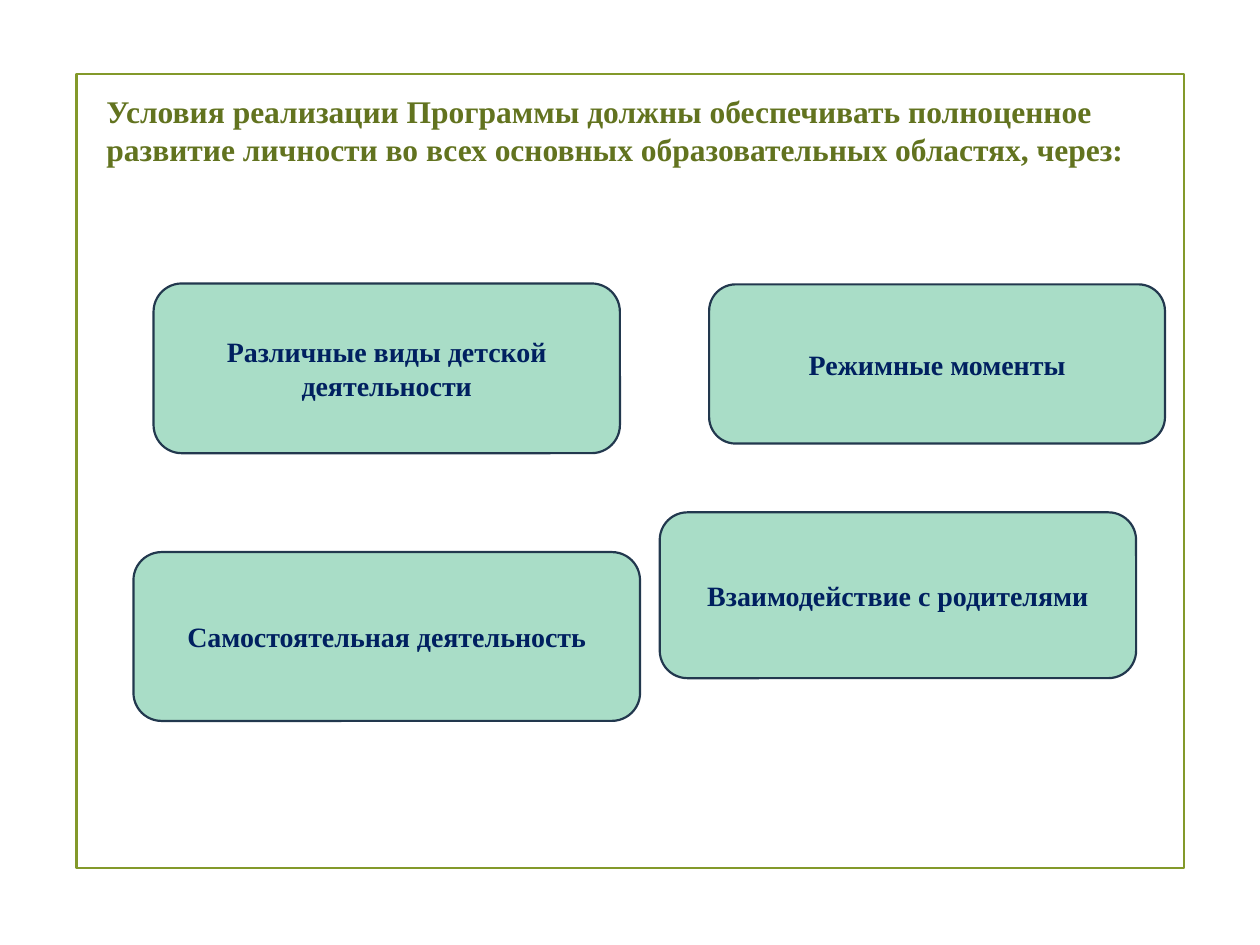
import pptx
import pptx.util
import pptx.dml.color
import pptx.enum.shapes
import pptx.enum.text

Pt = pptx.util.Pt
RGBColor = pptx.dml.color.RGBColor
MSO_SHAPE = pptx.enum.shapes.MSO_SHAPE
PP_ALIGN = pptx.enum.text.PP_ALIGN
MSO_ANCHOR = pptx.enum.text.MSO_ANCHOR

FRAME_GREEN = RGBColor(0x83, 0x99, 0x2A)
TITLE_GREEN = RGBColor(0x62, 0x73, 0x1F)
CARD_MINT = RGBColor(0xA9, 0xDD, 0xC7)
CARD_EDGE = RGBColor(0x22, 0x38, 0x4E)
NAVY = RGBColor(0x00, 0x20, 0x60)

TITLE = (
    "Условия реализации Программы должны обеспечивать полноценное "
    "развитие личности во всех основных образовательных областях, через:"
)
CARDS = [
    ("Различные виды детской деятельности", (44, 119.5, 266.5, 97)),
    ("Режимные моменты", (361.5, 120, 260.5, 91)),
    ("Самостоятельная деятельность", (32.5, 273, 289.5, 96.5)),
    ("Взаимодействие с родителями", (333.25, 250.25, 272.25, 94.75)),
]


def write_text(tf, text, size, color, align=PP_ALIGN.LEFT, anchor=MSO_ANCHOR.TOP):
    tf.word_wrap = True
    tf.vertical_anchor = anchor
    p = tf.paragraphs[0]
    p.alignment = align
    r = p.add_run()
    r.text = text
    r.font.name = "Times New Roman"
    r.font.size = Pt(size)
    r.font.bold = True
    r.font.color.rgb = color


def add_box(s, kind, box, line, fill=None):
    sp = s.shapes.add_shape(kind, *map(Pt, box))
    sp.shadow.inherit = False
    if fill is None:
        sp.fill.background()
    else:
        sp.fill.solid()
        sp.fill.fore_color.rgb = fill
    sp.line.color.rgb = line
    sp.line.width = Pt(1.25)
    return sp


def add_title(s, box):
    left, top, width, height = box
    sp = s.shapes.add_textbox(Pt(left + 10), Pt(top + 6.5), Pt(width - 4), Pt(72.5))
    write_text(sp.text_frame, TITLE, 18, TITLE_GREEN)


def add_cards(s, box):
    left, top, width, height = box
    for text, (x, y, w, h) in CARDS:
        card = (left + x, top + y, w, h)
        sp = add_box(s, MSO_SHAPE.ROUNDED_RECTANGLE, card, CARD_EDGE, CARD_MINT)
        write_text(sp.text_frame, text, 16, NAVY, PP_ALIGN.CENTER, MSO_ANCHOR.MIDDLE)


def build_slide(prs, box):
    s = prs.slides.add_slide(prs.slide_layouts[6])
    add_box(s, MSO_SHAPE.RECTANGLE, box, FRAME_GREEN)
    add_title(s, box)
    add_cards(s, box)


def main():
    prs = pptx.Presentation()
    prs.slide_width, prs.slide_height = Pt(720), Pt(540)
    build_slide(prs, (43.75, 42.5, 633, 453.5))
    prs.save("out.pptx")


if __name__ == "__main__":
    main()
